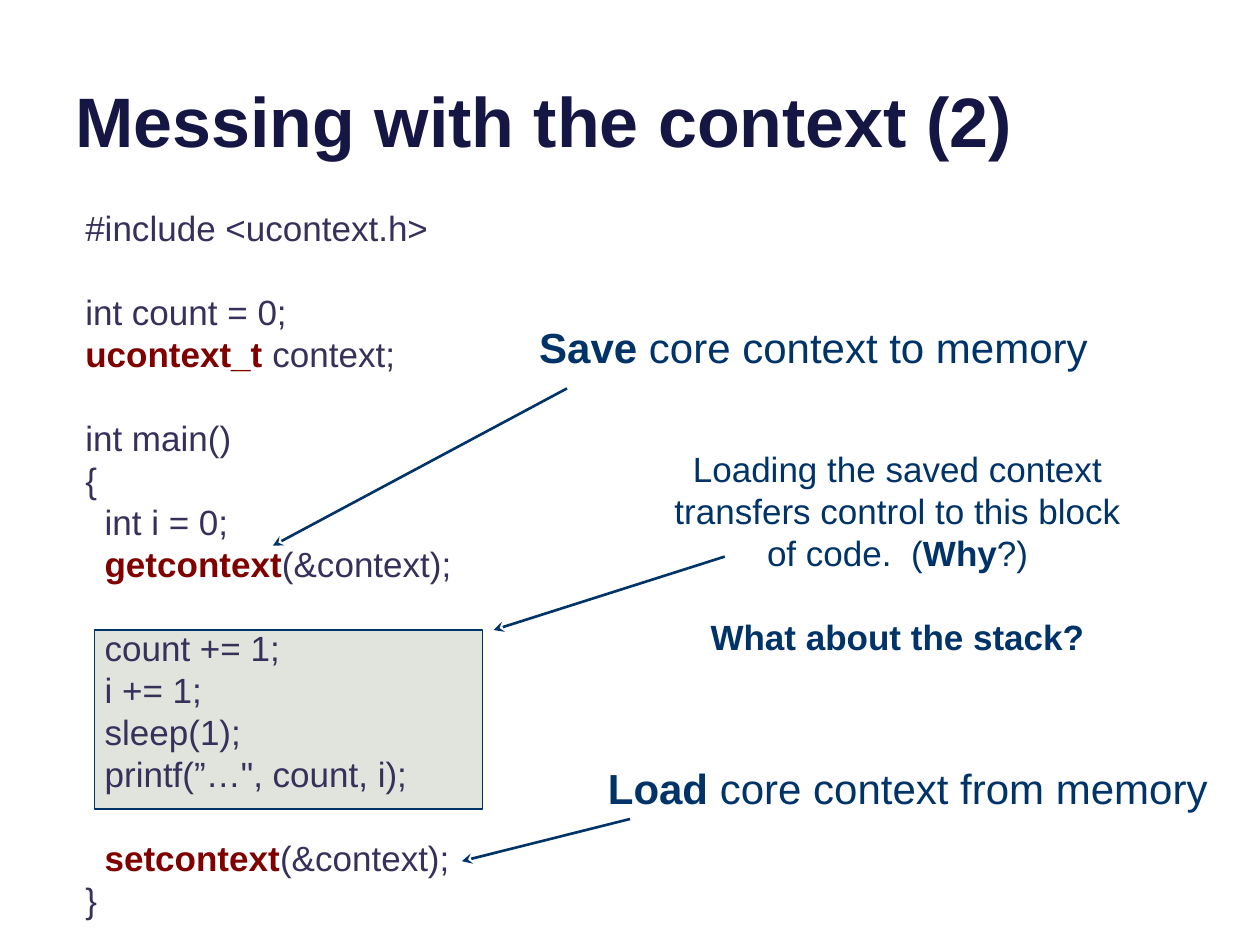
from lxml.etree import SubElement
from pptx import Presentation
from pptx.dml.color import RGBColor
from pptx.enum.shapes import MSO_CONNECTOR, MSO_SHAPE
from pptx.enum.text import MSO_ANCHOR, MSO_AUTO_SIZE, PP_ALIGN
from pptx.oxml.ns import qn
from pptx.util import Cm, Pt

NAVY, INK, CODE, KEYWORD, PANEL = "003367", "161645", "37305A", "800000", "E0E4DC"


def color(value):
    return RGBColor.from_string(value)


class SlideWriter:
    font = "Arial"

    def __init__(self, deck):
        self.page = deck.slides.add_slide(deck.slide_layouts[5])

    def format_span(self, span, size, hue, bold):
        span.font.name = self.font
        span.font.size = Pt(size)
        span.font.bold = bold
        span.font.color.rgb = color(hue)

    def title(self, text, left, top, width, height):
        box = self.page.shapes.title
        box.left, box.top, box.width, box.height = map(Cm, (left, top, width, height))
        frame = box.text_frame
        frame.text = text
        frame.vertical_anchor = MSO_ANCHOR.BOTTOM
        frame.auto_size = MSO_AUTO_SIZE.NONE
        para = frame.paragraphs[0]
        para.alignment = PP_ALIGN.LEFT
        self.format_span(para.runs[0], 40, INK, True)

    def panel(self, left, top, width, height):
        box = self.page.shapes.add_shape(
            MSO_SHAPE.RECTANGLE, *map(Cm, (left, top, width, height)))
        box.shadow.inherit = False
        box.fill.solid()
        box.fill.fore_color.rgb = color(PANEL)
        box.line.color.rgb = color(NAVY)
        box.line.width = Pt(0.75)

    def text(self, blocks, left, top, width, height, size=20, hue=NAVY,
             bold_hue=NAVY, align=PP_ALIGN.CENTER):
        """Write blocks of lines one line apart; ** marks bold, a tab indents."""
        box = self.page.shapes.add_textbox(*map(Cm, (left, top, width, height)))
        frame = box.text_frame
        frame.word_wrap = True
        frame.auto_size = MSO_AUTO_SIZE.SHAPE_TO_FIT_TEXT
        pitch = Pt(1.2 * size)
        para = frame.paragraphs[0]
        for block_index, block in enumerate(blocks):
            for line_index, line in enumerate(block):
                if block_index or line_index:
                    para = frame.add_paragraph()
                para.alignment = align
                para.line_spacing = pitch
                if block_index and not line_index:
                    para.space_before = pitch
                if line.startswith("\t"):
                    para._p.get_or_add_pPr().set("marL", str(Cm(0.39)))
                for index, piece in enumerate(line.strip("\t").split("**")):
                    if piece:
                        span = para.add_run()
                        span.text = piece
                        bold = index % 2 == 1
                        self.format_span(span, size, bold_hue if bold else hue, bold)

    def arrow(self, tip, start):
        line = self.page.shapes.add_connector(
            MSO_CONNECTOR.STRAIGHT, *map(Cm, (*start, *tip)))
        line.line.color.rgb = color(NAVY)
        line.line.width = Pt(1.5)
        SubElement(line.line._get_or_add_ln(), qn("a:tailEnd"), type="stealth")
        SubElement(line._element.spPr, qn("a:effectLst"))


def main():
    deck = Presentation()
    deck.slide_width, deck.slide_height = Cm(25.4), Cm(19.05)
    writer = SlideWriter(deck)

    # Highlighted block behind the code
    writer.panel(1.91, 12.7, 7.82, 3.61)

    # Title and program
    writer.title("Messing with the context (2)", 1.27, -0.94, 22.86, 4.32)
    program = [
        ["#include <ucontext.h>"],
        ["int count = 0;", "**ucontext_t **context;"],
        ["int main()", "{", "\tint i = 0;", "\t**getcontext**(&context);"],
        ["\tcount += 1;", "\ti += 1;", "\tsleep(1);", "\tprintf(”…\", count, i);"],
        ["\t**setcontext**(&context);", "}"],
    ]
    writer.text(program, 1.47, 4.04, 12.7, 14.78, hue=CODE, bold_hue=KEYWORD,
                align=PP_ALIGN.LEFT)

    # Arrows from the notes to the code
    writer.arrow(tip=(5.5, 11.0), start=(11.43, 7.83))
    writer.arrow(tip=(9.31, 17.36), start=(12.7, 16.51))
    writer.arrow(tip=(9.95, 12.7), start=(14.61, 11.22))

    # Notes
    writer.text([["Loading the saved context transfers control to this block "
                  "of code.  (**Why**?)"], ["**What about the stack?**"]],
                13.12, 8.89, 9.95, 4.52)
    writer.text([["**Save** core context to memory"]], 9.95, 6.35, 12.9, 1.27, size=24)
    writer.text([["**Load** core context from memory"]], 11.85, 15.24, 12.9, 1.27, size=24)

    deck.save("out.pptx")


if __name__ == "__main__":
    main()
